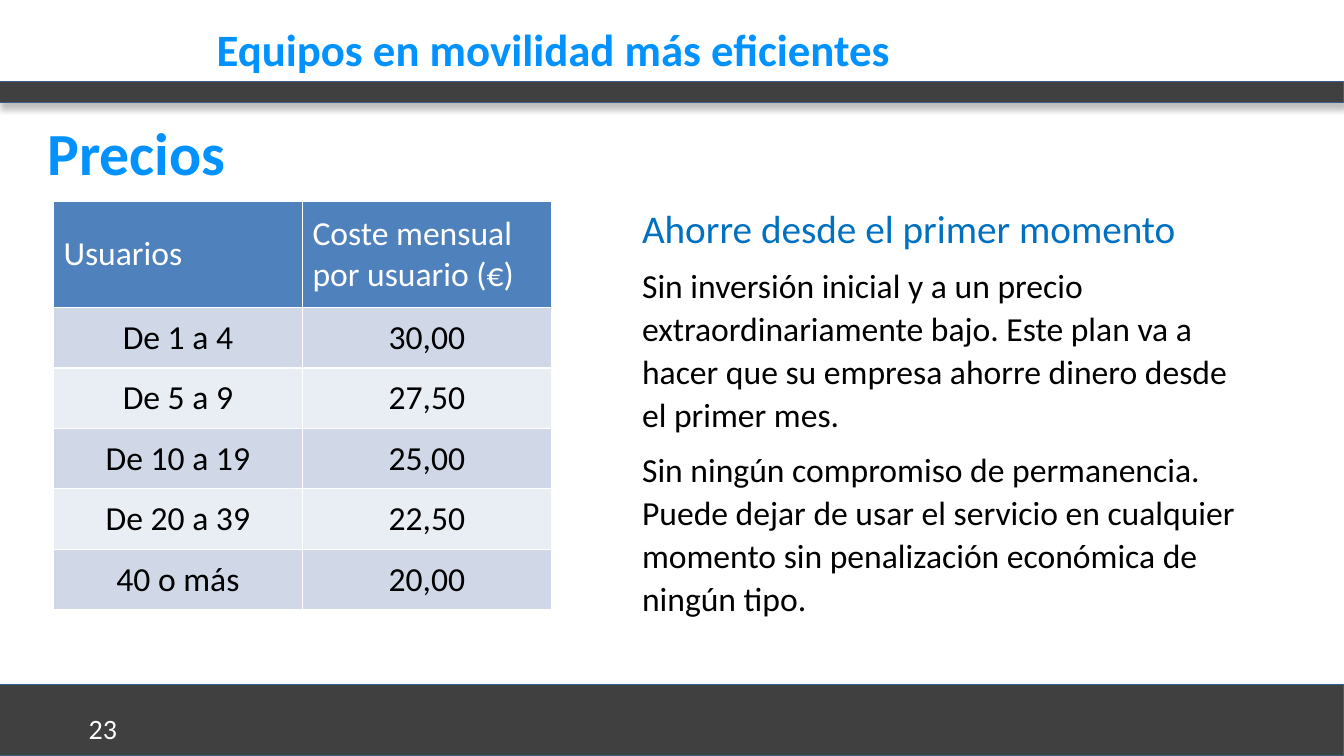
from lxml import etree
from pptx import Presentation
from pptx import util as u
from pptx.dml.color import RGBColor
from pptx.enum import shapes, text
from pptx.oxml import parse_xml
from pptx.oxml.ns import nsdecls, qn

FONT = "Calibri"
WHITE = RGBColor(0xFF, 0xFF, 0xFF)
BLACK = RGBColor(0x00, 0x00, 0x00)
CHARCOAL = RGBColor(0x40, 0x40, 0x40)
EDGE = RGBColor(0x3A, 0x5F, 0x8C)
BRIGHT_BLUE = RGBColor(0x01, 0x92, 0xFF)
LEAD_BLUE = RGBColor(0x00, 0x70, 0xC0)
HEAD_FILL = RGBColor(0x4F, 0x81, 0xBD)
ROW_FILLS = [RGBColor(0xE9, 0xED, 0xF4), RGBColor(0xD0, 0xD8, 0xE8)]

deck = Presentation()
deck.slide_width, deck.slide_height = u.Inches(13.33), u.Inches(7.5)
slide = deck.slides.add_slide(deck.slide_layouts[6])


def style(paragraph, size, color, bold=False):
    for run in paragraph.runs:
        run.font.name = FONT
        run.font.size = u.Pt(size)
        run.font.color.rgb = color
        run.font.bold = bold


def add_words(left, top, width, height, paragraphs):
    box = slide.shapes.add_textbox(*map(u.Inches, (left, top, width, height)))
    frame = box.text_frame
    frame.word_wrap = True
    frame.text = "\n".join(words for words, *_ in paragraphs)
    for paragraph, (_, size, color, bold) in zip(frame.paragraphs, paragraphs):
        style(paragraph, size, color, bold)
    return frame


bands = []
for top, height in ((0.81, 0.21), (6.79, 0.71)):
    band = slide.shapes.add_shape(
        shapes.MSO_SHAPE.RECTANGLE, 0, u.Inches(top), deck.slide_width, u.Inches(height))
    band.shadow.inherit = False
    band.fill.solid()
    band.fill.fore_color.rgb = CHARCOAL
    band.line.color.rgb = EDGE
    band.line.width = u.Pt(0)
    bands.append(band)
header_band, footer_band = bands

effects = header_band._element.spPr.find(qn("a:effectLst"))
effects.append(parse_xml(
    f'<a:outerShdw {nsdecls("a")} blurRad="{u.Pt(4)}" dist="{u.Pt(4)}" dir="4800000" '
    'algn="tl" rotWithShape="0"><a:srgbClr val="BFBFBF"/></a:outerShdw>'))

page_number = footer_band.text_frame
page_number.text = "23"
page_number.margin_left = u.Inches(0.88)
page_number.margin_top = u.Inches(0.2)
page_number.vertical_anchor = text.MSO_ANCHOR.MIDDLE
page_number.paragraphs[0].alignment = text.PP_ALIGN.LEFT
style(page_number.paragraphs[0], 20, WHITE)

slogan = add_words(2.05, 0.22, 10.5, 0.59,
                   [("Equipos en movilidad más eficientes", 32, BRIGHT_BLUE, True)])
slogan.paragraphs[0].line_spacing = u.Pt(34.7)
add_words(0.37, 1.1, 12.49, 0.76, [("Precios", 42.7, BRIGHT_BLUE, True)])

prices = [
    ("Usuarios", "Coste mensual por usuario (€)"),
    ("De 1 a 4", "30,00"),
    ("De 5 a 9", "27,50"),
    ("De 10 a 19", "25,00"),
    ("De 20 a 39", "22,50"),
    ("40 o más", "20,00"),
]
price_table = slide.shapes.add_table(
    len(prices), 2, *map(u.Inches, (0.53, 2, 4.94, 4.05))).table
for column in price_table.columns:
    column.width = u.Inches(2.47)
for r, entries in enumerate(prices):
    price_table.rows[r].height = u.Inches(0.6 if r else 1.05)
    for c, entry in enumerate(entries):
        cell = price_table.cell(r, c)
        cell.text_frame.text = entry
        cell.vertical_anchor = text.MSO_ANCHOR.MIDDLE
        paragraph = cell.text_frame.paragraphs[0]
        paragraph.alignment = text.PP_ALIGN.CENTER if r else text.PP_ALIGN.LEFT
        style(paragraph, 24, BLACK if r else WHITE)
        for side in ("lnL", "lnR", "lnT", "lnB"):
            border = etree.SubElement(cell._tc.get_or_add_tcPr(), qn(f"a:{side}"), w=str(u.Pt(1)))
            paint = etree.SubElement(border, qn("a:solidFill"))
            etree.SubElement(paint, qn("a:srgbClr"), val=str(WHITE))
        cell.fill.solid()
        cell.fill.fore_color.rgb = ROW_FILLS[r % 2] if r else HEAD_FILL

savings = add_words(6.27, 1.94, 6.3, 4.29, [
    ("Ahorre desde el primer momento", 28, LEAD_BLUE, False),
    ("Sin inversión inicial y a un precio extraordinariamente bajo. Este plan va a "
     "hacer que su empresa ahorre dinero desde el primer mes.", 24, BLACK, False),
    ("Sin ningún compromiso de permanencia. Puede dejar de usar el servicio en cualquier "
     "momento sin penalización económica de ningún tipo.", 24, BLACK, False),
])
for paragraph in savings.paragraphs:
    paragraph.line_spacing = 1.07
    paragraph.space_after = u.Pt(8)

deck.save("out.pptx")
